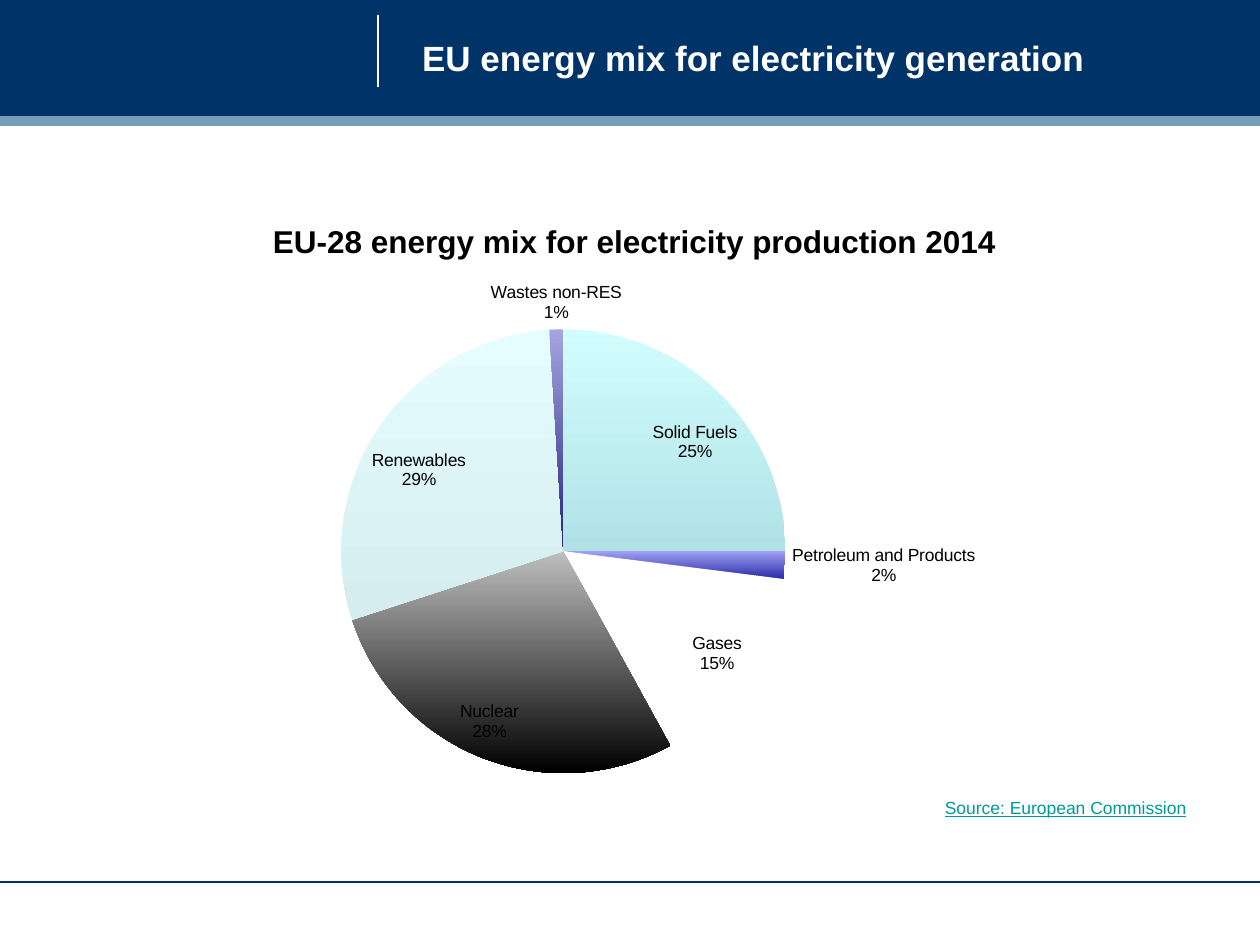
import pptx
import pptx.chart.data
import pptx.dml.color
import pptx.enum.chart
import pptx.enum.shapes
import pptx.enum.text
import pptx.oxml
import pptx.oxml.ns
import pptx.util
from pptx.util import Cm

COLORS = {"navy": "003368", "band": "759FB8", "white": "FFFFFF", "black": "000000", "source": "009999"}
FONT = "Arial"
ENERGY_MIX = [
    ("Solid Fuels", 25, "D2FDFF", "B0E2E5"),
    ("Petroleum and Products", 2, "A0A0F4", "2A2AA8"),
    ("Gases", 15, "FFFFFF", "FFFFFF"),
    ("Nuclear", 28, "BEBEBE", "000000"),
    ("Renewables", 29, "E5FDFF", "D5EDEE"),
    ("Wastes non-RES", 1, "A5A5E0", "20207F"),
]


def rgb(value):
    """Turn a hex string into a colour."""
    return pptx.dml.color.RGBColor.from_string(value)


def style_font(font, size, color, bold=False):
    """Set face, size, colour and weight of a font."""
    font.name = FONT
    font.size = pptx.util.Pt(size)
    font.bold = bold
    font.color.rgb = rgb(color)


def add_bar(slide, left, top, width, height, color):
    """Add a plain filled rectangle."""
    shape = slide.shapes.add_shape(pptx.enum.shapes.MSO_SHAPE.RECTANGLE, left, top, width, height)
    shape.shadow.inherit = False
    shape.fill.solid()
    shape.fill.fore_color.rgb = rgb(color)
    shape.line.fill.background()


def add_rule(slide, begin, end, color):
    """Add a thin straight line without shadow."""
    connector = slide.shapes.add_connector(pptx.enum.shapes.MSO_CONNECTOR.STRAIGHT, *begin, *end)
    connector.line.color.rgb = rgb(color)
    connector.line.width = pptx.util.Pt(0.75)
    properties = connector._element.spPr
    properties.append(properties.makeelement(pptx.oxml.ns.qn("a:effectLst"), {}))


def add_text(slide, left, top, width, height, text, size, color, bold=False):
    """Add a wrapped one-run text box and return its shape and run."""
    shape = slide.shapes.add_textbox(left, top, width, height)
    shape.text_frame.word_wrap = True
    run = shape.text_frame.paragraphs[0].add_run()
    run.text = text
    style_font(run.font, size, color, bold)
    return shape, run


def add_header(slide, left, top, width, height):
    """Draw the banner with its divider and title."""
    banner_height = height - Cm(0.2)
    add_bar(slide, left, top, width, banner_height, COLORS["navy"])
    add_bar(slide, left, top + banner_height, width, Cm(0.2), COLORS["band"])
    divider = left + Cm(7.62)
    add_rule(slide, (divider, top + Cm(0.3)), (divider, top + Cm(1.75)), COLORS["white"])
    title, run = add_text(slide, left + Cm(8.26), top + Cm(0.2), Cm(16.08), Cm(1.9),
                          "EU energy mix for electricity generation", 20, COLORS["white"], True)
    title.text_frame.vertical_anchor = pptx.enum.text.MSO_ANCHOR.MIDDLE


def set_layout(parent, index, **fractions):
    """Place a chart part by fractions of the chart area."""
    for layout in parent.findall(pptx.oxml.ns.qn("c:layout")):
        parent.remove(layout)
    target = '<c:layoutTarget val="inner"/>' if "w" in fractions else ""
    modes = '<c:xMode val="edge"/><c:yMode val="edge"/>'
    values = "".join(f'<c:{name} val="{value}"/>' for name, value in fractions.items())
    parent.insert(index, pptx.oxml.parse_xml(
        f'<c:layout {pptx.oxml.ns.nsdecls("c")}><c:manualLayout>{target}{modes}{values}'
        "</c:manualLayout></c:layout>"))


def add_energy_chart(slide, left, top, width, height):
    """Draw the pie chart of electricity sources."""
    data = pptx.chart.data.CategoryChartData()
    data.categories = [name for name, *_ in ENERGY_MIX]
    data.add_series("Series 1", [share for _, share, *_ in ENERGY_MIX])
    chart = slide.shapes.add_chart(pptx.enum.chart.XL_CHART_TYPE.PIE, left, top, width, height, data).chart
    style_font(chart.font, 10, COLORS["black"])
    chart.has_legend = False
    chart.has_title = True
    run = chart.chart_title.text_frame.paragraphs[0].add_run()
    run.text = "EU-28 energy mix for electricity production 2014"
    style_font(run.font, 18, COLORS["black"], True)
    set_layout(chart.chart_title._element, 1, x=0.16, y=0.04)
    set_layout(chart._chartSpace.chart.plotArea, 0, x=0.23, y=0.23, w=0.42, h=0.74)

    plot = chart.plots[0]
    plot.vary_by_categories = True
    for index, (_, _, upper, lower) in enumerate(ENERGY_MIX):
        chart_format = plot.series[0].points[index].format
        chart_format.line.fill.background()
        chart_format.fill.gradient()
        chart_format.fill.gradient_angle = 270
        for stop, color in zip(chart_format.fill.gradient_stops, (upper, lower)):
            stop.color.rgb = rgb(color)

    plot.has_data_labels = True
    labels = plot.data_labels
    style_font(labels.font, 10, COLORS["black"])
    labels.show_value = False
    labels.show_category_name = True
    labels.show_percentage = True
    labels.number_format = "0%"
    labels.number_format_is_linked = False
    labels.position = pptx.enum.chart.XL_LABEL_POSITION.BEST_FIT
    separator = pptx.oxml.parse_xml(f'<c:separator {pptx.oxml.ns.nsdecls("c")}>\n</c:separator>')
    labels._element.find(pptx.oxml.ns.qn("c:showBubbleSize")).addnext(separator)


def add_footer(slide, left, top, width, height):
    """Add the source note and the closing rule."""
    note, run = add_text(slide, left + Cm(8.26), top, Cm(15.9), Cm(1.55),
                         "Source: European Commission", 10, COLORS["source"])
    note.text_frame.paragraphs[0].alignment = pptx.enum.text.PP_ALIGN.RIGHT
    run.font.underline = True
    bottom = top + height
    add_rule(slide, (left, bottom), (left + width, bottom), COLORS["navy"])


def main():
    """Build and save the slide."""
    presentation = pptx.Presentation()
    presentation.slide_width = Cm(25.4)
    presentation.slide_height = Cm(19.05)
    slide = presentation.slides.add_slide(presentation.slide_layouts[6])
    width = presentation.slide_width
    add_header(slide, Cm(0), Cm(0), width, Cm(2.54))
    add_energy_chart(slide, Cm(1.98), Cm(3.86), Cm(21.31), Cm(12.09))
    add_footer(slide, Cm(0), Cm(15.95), width, Cm(1.83))
    presentation.save("out.pptx")


if __name__ == "__main__":
    main()
